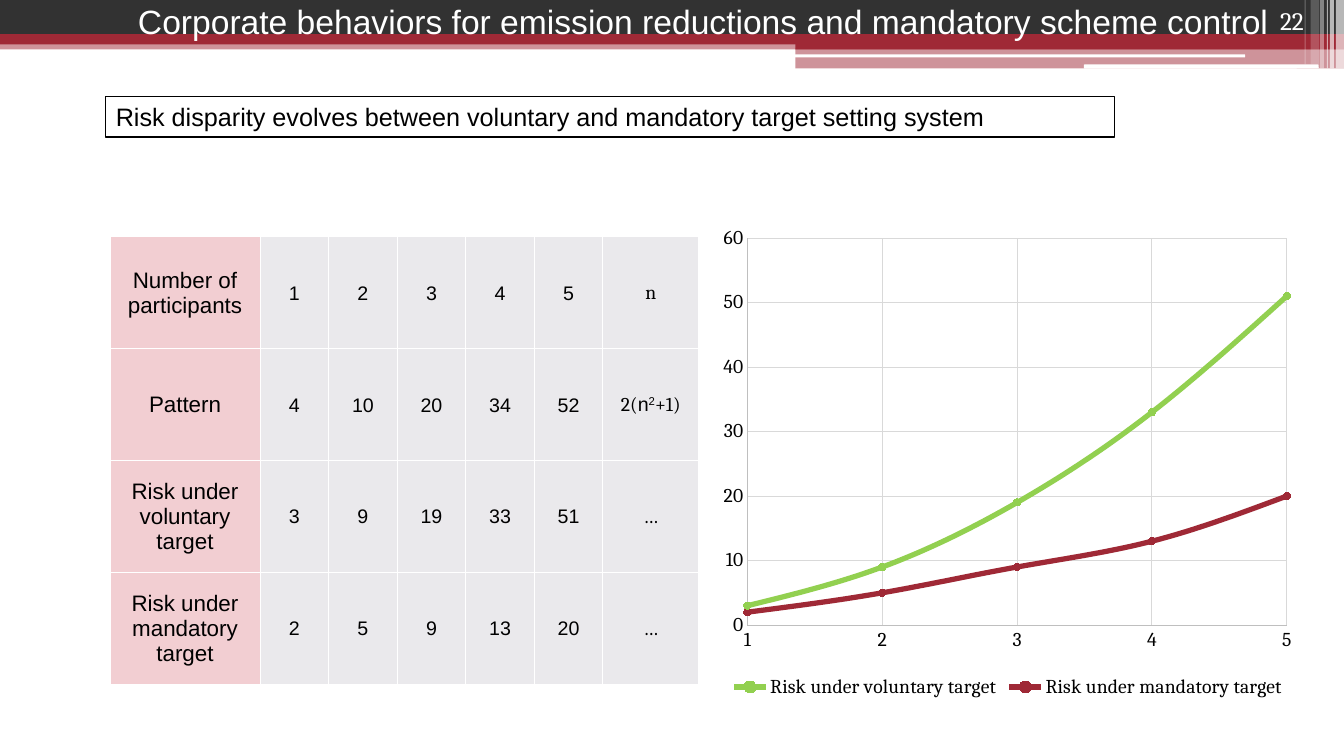
from dataclasses import dataclass

from lxml import etree
from pptx import Presentation
from pptx.chart.data import XyChartData
from pptx.dml.color import RGBColor
from pptx.enum.chart import XL_CHART_TYPE, XL_LEGEND_POSITION, XL_MARKER_STYLE, XL_TICK_MARK
from pptx.enum.shapes import MSO_SHAPE
from pptx.enum.text import MSO_ANCHOR, PP_ALIGN
from pptx.oxml import parse_xml
from pptx.oxml.ns import nsdecls, qn
from pptx.util import Inches, Pt

RECT, ROUNDED = MSO_SHAPE.RECTANGLE, MSO_SHAPE.ROUNDED_RECTANGLE
LEFT, CENTER, RIGHT = PP_ALIGN.LEFT, PP_ALIGN.CENTER, PP_ALIGN.RIGHT
TOP, MIDDLE, BOTTOM = MSO_ANCHOR.TOP, MSO_ANCHOR.MIDDLE, MSO_ANCHOR.BOTTOM
SMOOTH_SCATTER = XL_CHART_TYPE.XY_SCATTER_SMOOTH
NO_TICK = XL_TICK_MARK.NONE


@dataclass(frozen=True)
class Theme:
    sans: str = "Arial"
    serif: str = "Cambria"
    black: str = "000000"
    white: str = "FFFFFF"
    charcoal: str = "323232"
    red: str = "9F2936"
    green: str = "92D050"
    header_cell: str = "F2CED2"
    value_cell: str = "EAE9EC"
    axis: str = "BFBFBF"
    grid: str = "D9D9D9"
    title: int = 24
    body: int = 18
    row_header: int = 16
    small: int = 14


THEME = Theme()

# shape, left, top, width, height, colour, opacity in percent
BANNER = [
    (RECT, 0, 0.4, 13.33, 0.09, THEME.red, 50),
    (RECT, 0, 0, 13.33, 0.34, THEME.charcoal, 100),
    (RECT, 0, 0.34, 13.33, 0.1, THEME.red, 100),
    (RECT, 7.89, 0.39, 5.44, 0.1, THEME.red, 100),
    (RECT, 7.89, 0.48, 5.44, 0.2, THEME.red, 50),
    (ROUNDED, 7.88, 0.54, 4.47, 0.03, THEME.white, 100),
    (ROUNDED, 10.75, 0.64, 2.33, 0.04, THEME.white, 100),
    (RECT, 13.25, 0, 0.08, 0.68, THEME.white, 65),
    (RECT, 13.19, 0, 0.04, 0.68, THEME.white, 65),
    (RECT, 13.16, 0, 0.01, 0.68, THEME.white, 60),
    (RECT, 13.09, 0, 0.04, 0.68, THEME.white, 40),
    (RECT, 13, 0, 0.08, 0.64, THEME.white, 20),
    (RECT, 12.94, 0, 0.01, 0.64, THEME.white, 30),
]

VOLUNTARY = "Risk under voluntary target"
MANDATORY = "Risk under mandatory target"
PARTICIPANTS = [1, 2, 3, 4, 5]
RISKS = {VOLUNTARY: [3, 9, 19, 33, 51], MANDATORY: [2, 5, 9, 13, 20]}
LINE_COLORS = [THEME.green, THEME.red]

# row header, values, last cell as (text, font, baseline) runs
TABLE_ROWS = [
    ("Number of participants", PARTICIPANTS, [("n", THEME.serif, 0)]),
    ("Pattern", [4, 10, 20, 34, 52],
     [("2(", THEME.serif, 0), ("n", THEME.sans, 0),
      ("2", THEME.sans, 30000), ("+1)", THEME.serif, 0)]),
    *((name, risks, [("…", THEME.serif, 0)]) for name, risks in RISKS.items()),
]
COLUMN_WIDTHS = [1.49, *[0.68] * len(PARTICIPANTS), 0.95]
ROW_HEIGHT = 1.11


def rgb(color):
    return RGBColor.from_string(color)


def style_font(font, size, name, color=THEME.black):
    font.size, font.name = Pt(size), name
    font.color.rgb = rgb(color)


def style_line(line, color, width):
    line.color.rgb = rgb(color)
    line.width = Pt(width)


def add_block(slide, kind, left, top, width, height, color, opacity):
    block = slide.shapes.add_shape(
        kind, Inches(left), Inches(top), Inches(width), Inches(height))
    block.shadow.inherit = False
    block.line.fill.background()
    block.fill.solid()
    block.fill.fore_color.rgb = rgb(color)
    if opacity < 100:
        tint = block.fill._xPr.find(".//" + qn("a:srgbClr"))
        etree.SubElement(tint, qn("a:alpha"), val=str(opacity * 1000))


def write_text(frame, text, size, name, color, align, anchor):
    frame.word_wrap = True
    frame.vertical_anchor = anchor
    paragraph = frame.paragraphs[0]
    paragraph.text = text
    paragraph.alignment = align
    style_font(paragraph.font, size, name, color)


def add_label(slide, box, text, size, name, color, align=LEFT, anchor=TOP):
    label = slide.shapes.add_textbox(*map(Inches, box))
    write_text(label.text_frame, text, size, name, color, align, anchor)


def add_framed_label(slide, box, text):
    frame = slide.shapes.add_shape(RECT, *map(Inches, box))
    frame.shadow.inherit = False
    frame.fill.background()
    style_line(frame.line, THEME.black, 0.75)
    write_text(frame.text_frame, text, THEME.body, THEME.sans, THEME.black, LEFT, TOP)


def fill_cell(cell, runs, size, color):
    """Write (text, font, baseline) runs into a centred, white-bordered cell."""
    cell.margin_left = cell.margin_right = cell.margin_top = Inches(0.01)
    cell.margin_bottom = 0
    cell.vertical_anchor = MIDDLE
    cell.fill.solid()
    cell.fill.fore_color.rgb = rgb(color)
    properties = cell._tc.get_or_add_tcPr()
    for position, side in enumerate(("lnL", "lnR", "lnT", "lnB")):
        properties.insert(position, parse_xml(
            f'<a:{side} {nsdecls("a")} w="{Pt(1)}"><a:solidFill>'
            f'<a:srgbClr val="{THEME.white}"/></a:solidFill></a:{side}>'))
    paragraph = cell.text_frame.paragraphs[0]
    paragraph.alignment = CENTER
    style_font(paragraph.font, size, runs[0][1])
    for text, name, baseline in runs:
        run = paragraph.add_run()
        run.text = text
        if len(runs) > 1:
            style_font(run.font, size, name)
        if baseline:
            run._r.get_or_add_rPr().set("baseline", str(baseline))


def add_risk_table(slide, left, top):
    table = slide.shapes.add_table(
        len(TABLE_ROWS), len(COLUMN_WIDTHS), Inches(left), Inches(top),
        Inches(sum(COLUMN_WIDTHS)), Inches(ROW_HEIGHT * len(TABLE_ROWS))).table
    table.first_row = table.horz_banding = False
    for column, width in zip(table.columns, COLUMN_WIDTHS):
        column.width = Inches(width)
    for r, (header, values, last) in enumerate(TABLE_ROWS):
        table.rows[r].height = Inches(ROW_HEIGHT)
        fill_cell(table.cell(r, 0), [(header, THEME.sans, 0)],
                  THEME.row_header, THEME.header_cell)
        contents = [[(str(value), THEME.sans, 0)] for value in values] + [last]
        for c, runs in enumerate(contents, start=1):
            fill_cell(table.cell(r, c), runs, THEME.small, THEME.value_cell)


def style_axis(axis, low, high, step):
    axis.minimum_scale, axis.maximum_scale, axis.major_unit = low, high, step
    axis.major_tick_mark = axis.minor_tick_mark = NO_TICK
    axis.has_major_gridlines = True
    style_line(axis.major_gridlines.format.line, THEME.grid, 0.75)
    style_line(axis.format.line, THEME.axis, 0.75)
    style_font(axis.tick_labels.font, THEME.small, THEME.serif)


def place_plot(chart, **fractions):
    """Fix the inner plot area as fractions of the chart."""
    area = chart._chartSpace.chart.plotArea
    for layout in area.findall(qn("c:layout")):
        area.remove(layout)
    sizes = "".join(f'<c:{key} val="{value}"/>' for key, value in fractions.items())
    area.insert(0, parse_xml(
        f'<c:layout {nsdecls("c")}><c:manualLayout><c:layoutTarget val="inner"/>'
        f'<c:xMode val="edge"/><c:yMode val="edge"/>{sizes}'
        '</c:manualLayout></c:layout>'))


def add_risk_chart(slide, box):
    data = XyChartData()
    for name, risks in RISKS.items():
        points = data.add_series(name)
        for participants, risk in zip(PARTICIPANTS, risks):
            points.add_data_point(participants, risk)
    chart = slide.shapes.add_chart(SMOOTH_SCATTER, *map(Inches, box), data).chart
    chart.has_title = False
    style_font(chart.font, THEME.small, THEME.serif)
    chart.has_legend = True
    chart.legend.position = XL_LEGEND_POSITION.BOTTOM
    chart.legend.include_in_layout = False
    style_font(chart.legend.font, THEME.small, THEME.serif)
    style_axis(chart.category_axis, 1, 5, 1)
    style_axis(chart.value_axis, 0, 60, 10)
    place_plot(chart, x=0.06, y=0.04, w=0.91, h=0.8)
    plot = chart.plots[0]
    plot.vary_by_categories = False
    for series, color in zip(plot.series, LINE_COLORS):
        series._element.find(qn("c:smooth")).set("val", "1")
        style_line(series.format.line, color, 3.75)
        series.marker.style = XL_MARKER_STYLE.CIRCLE
        series.marker.size = 5
        series.marker.format.fill.solid()
        series.marker.format.fill.fore_color.rgb = rgb(color)
        style_line(series.marker.format.line, color, 0.75)


def main():
    deck = Presentation()
    deck.slide_width, deck.slide_height = Inches(13.33), Inches(7.5)
    slide = deck.slides.add_slide(deck.slide_layouts[6])
    for block in BANNER:
        add_block(slide, *block)
    add_risk_table(slide, 1.09, 2.35)
    add_risk_chart(slide, (7.06, 2.17, 5.88, 4.8))
    add_label(slide, (1.27, -0.04, 11.58, 0.5),
              "Corporate behaviors for emission reductions and mandatory scheme control",
              THEME.title, THEME.sans, THEME.white)
    add_framed_label(slide, (1.05, 0.96, 10, 0.4),
                     "Risk disparity evolves between voluntary and mandatory target setting system")
    add_label(slide, (11.92, 0, 1.11, 0.4), "22", THEME.body, THEME.serif,
              THEME.white, RIGHT, BOTTOM)
    deck.save("out.pptx")


if __name__ == "__main__":
    main()
